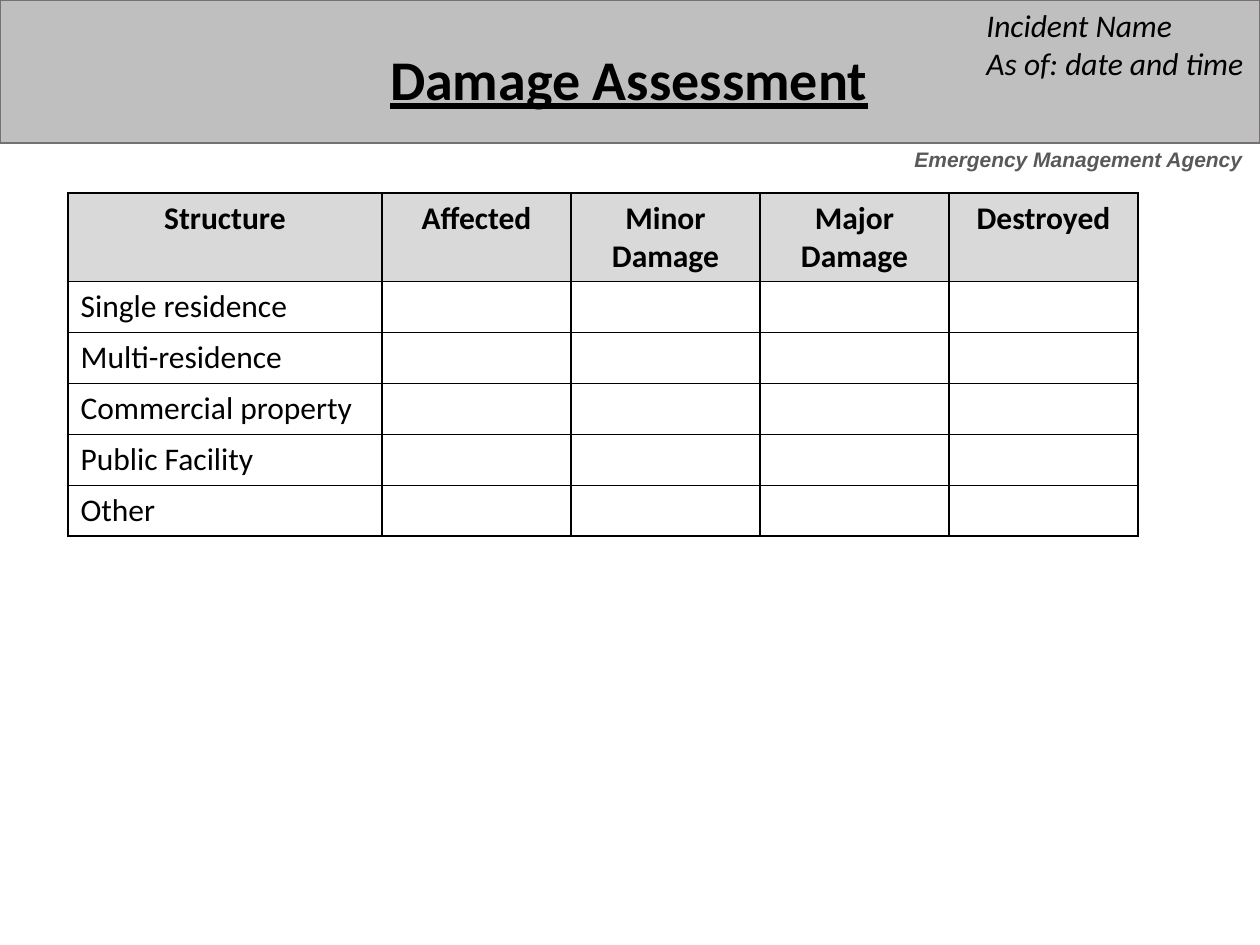
from lxml import etree
from pptx import Presentation, util as u
from pptx.dml.color import RGBColor
from pptx.enum import shapes, text
from pptx.oxml import ns

SCALE = u.Inches(1) / 126
BLACK = RGBColor(0x00, 0x00, 0x00)
BANNER_GRAY = RGBColor(0xBF, 0xBF, 0xBF)
BANNER_EDGE = RGBColor(0x76, 0x71, 0x71)
AGENCY_GRAY = RGBColor(0x59, 0x59, 0x59)
HEADER_GRAY = RGBColor(0xD9, 0xD9, 0xD9)

HEADINGS = ["Structure", "Affected", "Minor Damage", "Major Damage", "Destroyed"]
STRUCTURES = ["Single residence", "Multi-residence", "Commercial property",
              "Public Facility", "Other"]
COLUMN_WIDTHS = [314] + [189] * 4
ROW_HEIGHTS = [88] + [51] * len(STRUCTURES)


def px(length):
    return u.Emu(round(length * SCALE))


def style(paragraph, size, color=BLACK, name="Calibri", bold=False,
          italic=False, underline=None, align=None):
    paragraph.alignment = align
    font = paragraph.font
    font.size = u.Pt(size)
    font.name = name
    font.color.rgb = color
    font.bold = bold
    font.italic = italic
    font.underline = underline


def add_banner(slide, width, height):
    banner = slide.shapes.add_shape(
        shapes.MSO_SHAPE.RECTANGLE, 0, 0, px(width), px(height))
    banner.shadow.inherit = False
    banner.fill.solid()
    banner.fill.fore_color.rgb = BANNER_GRAY
    banner.line.color.rgb = BANNER_EDGE
    banner.line.width = u.Pt(1)


def add_label(slide, bounds, lines, wrap=False, **look):
    frame = slide.shapes.add_textbox(*map(px, bounds)).text_frame
    frame.word_wrap = wrap
    frame.auto_size = text.MSO_AUTO_SIZE.SHAPE_TO_FIT_TEXT
    frame.text = "\n".join(lines)
    for paragraph in frame.paragraphs:
        style(paragraph, **look)


def add_borders(cell):
    properties = cell._tc.get_or_add_tcPr()
    for side in ("lnL", "lnR", "lnT", "lnB"):
        border = etree.SubElement(
            properties, ns.qn(f"a:{side}"), w=str(u.Pt(1)))
        fill = etree.SubElement(border, ns.qn("a:solidFill"))
        etree.SubElement(fill, ns.qn("a:srgbClr"), val=str(BLACK))


def add_damage_table(slide, left, top):
    rows = [HEADINGS] + [[name] + [""] * 4 for name in STRUCTURES]
    table = slide.shapes.add_table(
        len(rows), len(HEADINGS), px(left), px(top),
        px(sum(COLUMN_WIDTHS)), px(sum(ROW_HEIGHTS))).table
    table.first_row = False
    table.horz_banding = False
    for column, width in zip(table.columns, COLUMN_WIDTHS):
        column.width = px(width)
    for row, height, values in zip(table.rows, ROW_HEIGHTS, rows):
        row.height = px(height)
        is_header = values is HEADINGS
        for cell, value in zip(row.cells, values):
            add_borders(cell)
            cell.text = value
            style(cell.text_frame.paragraphs[0], 18, bold=is_header,
                  align=text.PP_ALIGN.CENTER if is_header else None)
            if is_header:
                cell.fill.solid()
                cell.fill.fore_color.rgb = HEADER_GRAY
            else:
                cell.fill.background()


def main():
    deck = Presentation()
    deck.slide_width, deck.slide_height = px(1260), px(945)
    slide = deck.slides.add_slide(deck.slide_layouts[6])
    add_banner(slide, 1260, 143)
    add_label(slide, (974, 0, 286, 89),
              ["Incident Name", "As of: date and time"], size=18, italic=True)
    add_label(slide, (902, 140, 357, 38), ["Emergency Management Agency"],
              size=12, color=AGENCY_GRAY, name="Arial", bold=True, italic=True)
    add_label(slide, (176, 38, 906, 81), ["Damage Assessment"], wrap=True,
              size=32, bold=True, underline=True, align=text.PP_ALIGN.CENTER)
    add_damage_table(slide, 68, 193)
    deck.save("out.pptx")


if __name__ == "__main__":
    main()
